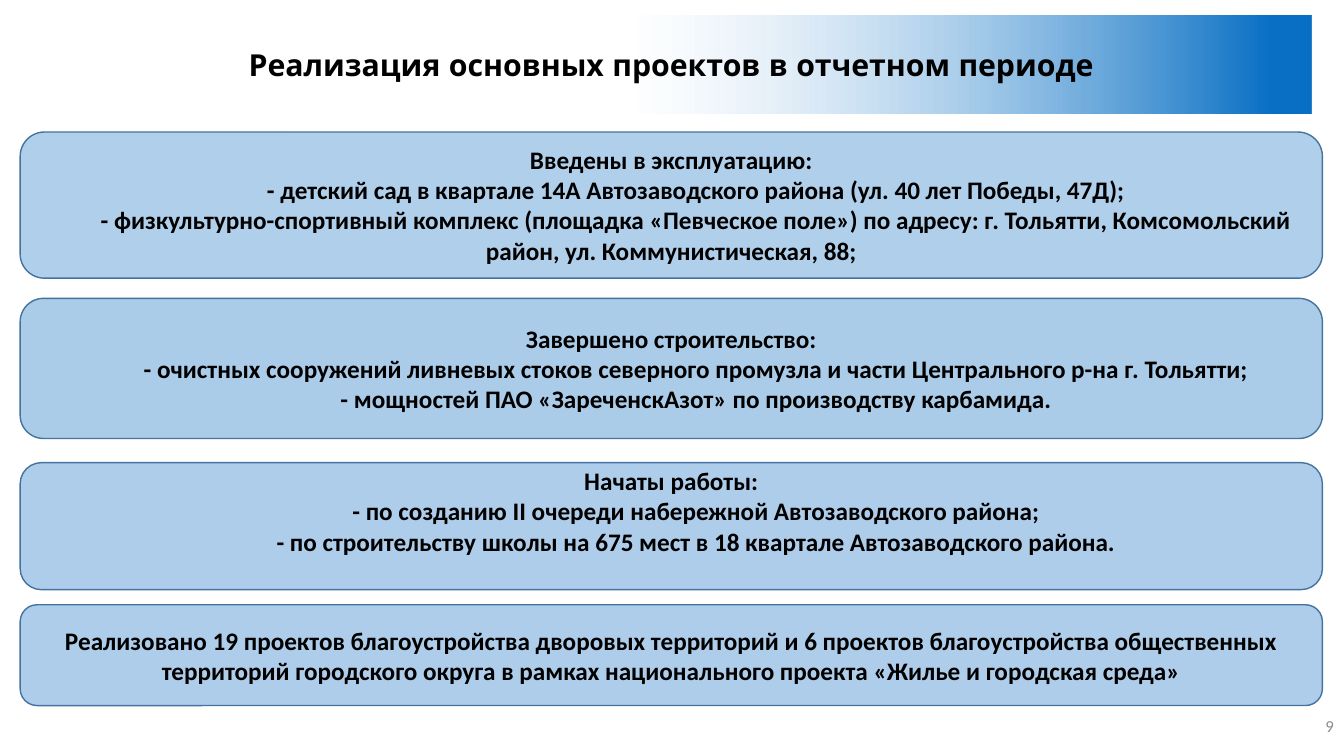
import dataclasses

import lxml.etree
import pptx
import pptx.dml.color
import pptx.enum.shapes
import pptx.enum.text
import pptx.oxml.ns
import pptx.util

Pt = pptx.util.Pt
RGB = pptx.dml.color.RGBColor.from_string
ALIGN = pptx.enum.text.PP_ALIGN
ANCHOR = pptx.enum.text.MSO_ANCHOR
qn = pptx.oxml.ns.qn


@dataclasses.dataclass(frozen=True)
class Theme:
    title_font: str = "Quicksand"
    body_font: str = "Calibri"
    text: str = "000000"
    muted: str = "8C8C8C"
    panel: str = "5B9BD5"
    panel_line: str = "43739E"
    band_start: str = "FFFFFF"
    band_end: str = "086FC4"
    title_size: float = 21.6
    body_size: float = 18
    number_size: float = 12


class Builder:
    def __init__(self, slide, theme):
        self.slide = slide
        self.theme = theme

    def style(self, p, font, size, color, align, bold=False):
        p.font.name = font
        p.font.size = Pt(size)
        p.font.bold = bold
        p.font.color.rgb = RGB(color)
        p.alignment = align

    def set_alpha(self, fill_element, percent):
        color = next(fill_element.iter(qn("a:srgbClr")))
        lxml.etree.SubElement(color, qn("a:alpha")).set("val", str(percent * 1000))

    def title(self, text, left, top, width, height):
        t = self.theme
        sp = self.slide.shapes.title
        sp.left, sp.top, sp.width, sp.height = map(Pt, (left, top, width, height))
        sp.fill.gradient()
        sp.fill.gradient_angle = 0
        stops = sp.fill.gradient_stops
        for stop, position, color in zip(stops, (0.47, 0.97), (t.band_start, t.band_end)):
            stop.position = position
            stop.color.rgb = RGB(color)
        self.set_alpha(sp._element.spPr.find(qn("a:gradFill")), 33)
        tf = sp.text_frame
        tf.text = text
        tf.word_wrap = True
        tf.auto_size = pptx.enum.text.MSO_AUTO_SIZE.NONE
        tf.vertical_anchor = ANCHOR.MIDDLE
        self.style(tf.paragraphs[0], t.title_font, t.title_size, t.text, ALIGN.CENTER, True)

    def panel(self, lines, left, top, width, height, alpha, anchor, bottom_inset):
        t = self.theme
        sp = self.slide.shapes.add_shape(
            pptx.enum.shapes.MSO_SHAPE.ROUNDED_RECTANGLE,
            Pt(left), Pt(top), Pt(width), Pt(height))
        sp.shadow.inherit = False
        sp.fill.solid()
        sp.fill.fore_color.rgb = RGB(t.panel)
        self.set_alpha(sp._element.spPr.find(qn("a:solidFill")), alpha)
        sp.line.color.rgb = RGB(t.panel_line)
        sp.line.width = Pt(1)
        tf = sp.text_frame
        tf.word_wrap = True
        tf.vertical_anchor = anchor
        tf.margin_bottom = Pt(bottom_inset)
        for i, line in enumerate(lines):
            p = tf.add_paragraph() if i else tf.paragraphs[0]
            p.text = line
            self.style(p, t.body_font, t.body_size, t.text, ALIGN.CENTER, True)
            if i:
                pPr = p._p.get_or_add_pPr()
                pPr.set("marL", "0")
                pPr.set("indent", str(Pt(35.4)))

    def number(self, text, left, top, width, height):
        t = self.theme
        tb = self.slide.shapes.add_textbox(Pt(left), Pt(top), Pt(width), Pt(height))
        tf = tb.text_frame
        tf.word_wrap = True
        tf.vertical_anchor = ANCHOR.MIDDLE
        p = tf.paragraphs[0]
        p.text = text
        self.style(p, t.body_font, t.number_size, t.muted, ALIGN.RIGHT)


PANELS = [
    (94.3, 104.4, 48, ANCHOR.TOP, 3.6, [
        "Введены в эксплуатацию:",
        "- детский сад в квартале 14А Автозаводского района (ул. 40 лет Победы, 47Д);",
        "- физкультурно-спортивный комплекс (площадка «Певческое поле») по адресу: "
        "г. Тольятти, Комсомольский район, ул. Коммунистическая, 88;",
    ]),
    (213.1, 100.1, 51, ANCHOR.MIDDLE, 3.6, [
        "Завершено строительство:",
        "- очистных сооружений ливневых стоков северного промузла "
        "и части Центрального р-на г. Тольятти;",
        "- мощностей ПАО «ЗареченскАзот» по производству карбамида.",
    ]),
    (330.5, 90.7, 49, ANCHOR.MIDDLE, 25.6, [
        "Начаты работы:",
        "- по созданию II очереди набережной Автозаводского района;",
        "- по строительству школы на 675 мест в 18 квартале Автозаводского района.",
    ]),
    (432, 72, 49, ANCHOR.MIDDLE, 3.6, [
        "Реализовано 19 проектов благоустройства дворовых территорий "
        "и 6 проектов благоустройства общественных территорий городского округа "
        "в рамках национального проекта «Жилье и городская среда»",
    ]),
]


def main():
    prs = pptx.Presentation()
    prs.slide_width, prs.slide_height = Pt(960), Pt(540)
    s = prs.slides.add_slide(prs.slide_layouts.get_by_name("Title Only"))
    b = Builder(s, Theme())
    b.title("Реализация основных проектов в отчетном периоде", 22.3, 10.8, 914.4, 70.6)
    for top, height, alpha, anchor, bottom_inset, lines in PANELS:
        b.panel(lines, 14.4, top, 930.2, height, alpha, anchor, bottom_inset)
    b.number("9", 927.4, 504, 32.4, 28.8)
    prs.save("out.pptx")


if __name__ == "__main__":
    main()
